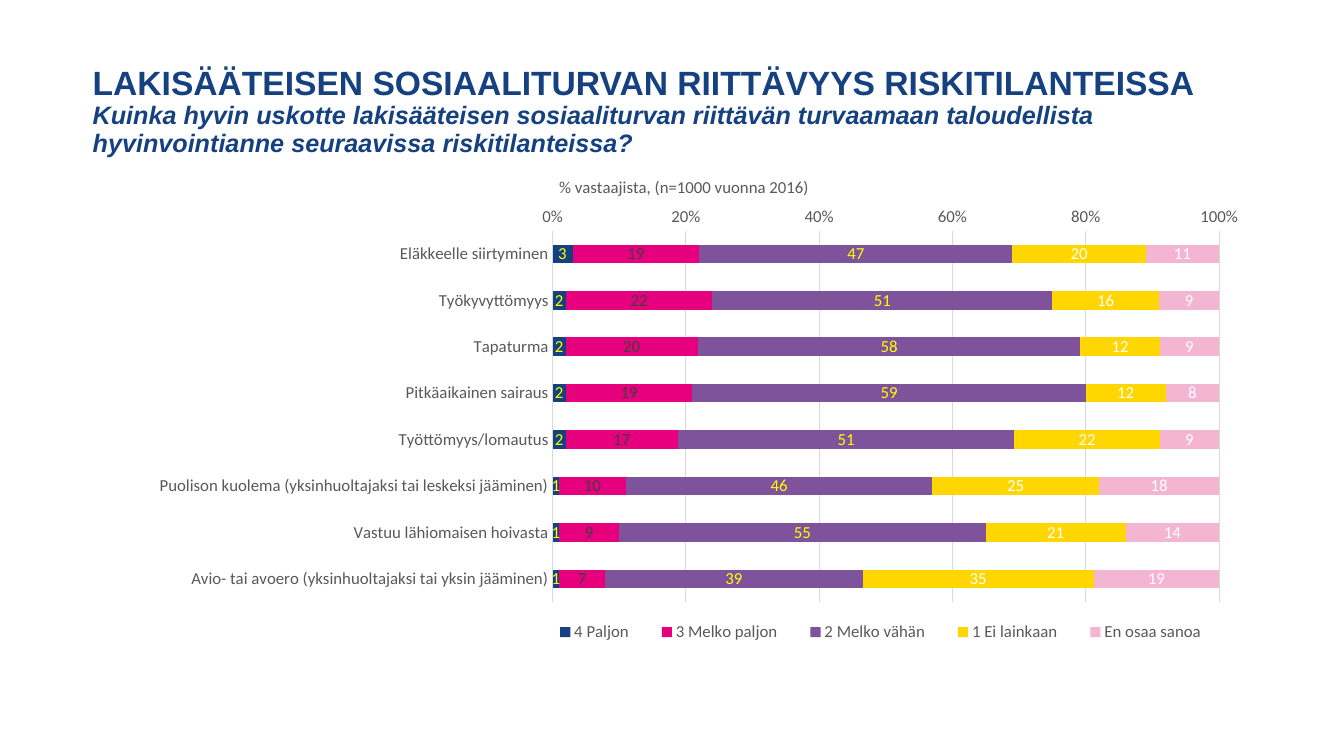
from lxml.etree import SubElement
from pptx import Presentation
from pptx.chart.data import CategoryChartData
from pptx.dml.color import RGBColor
from pptx.enum.chart import XL_CHART_TYPE as ChartType
from pptx.enum.chart import XL_LEGEND_POSITION as LegendPosition
from pptx.enum.chart import XL_TICK_MARK as TickMark
from pptx.enum.text import MSO_ANCHOR, MSO_AUTO_SIZE, PP_ALIGN
from pptx.oxml.ns import qn
from pptx.util import Pt

HEADING = "LAKISÄÄTEISEN SOSIAALITURVAN RIITTÄVYYS RISKITILANTEISSA"
QUESTION = ("Kuinka hyvin uskotte lakisääteisen sosiaaliturvan riittävän turvaamaan "
            "taloudellista hyvinvointianne seuraavissa riskitilanteissa?")
CHART_TITLE = "% vastaajista, (n=1000 vuonna 2016)"
RISKS = [
    "Eläkkeelle siirtyminen",
    "Työkyvyttömyys",
    "Tapaturma",
    "Pitkäaikainen sairaus",
    "Työttömyys/lomautus",
    "Puolison kuolema (yksinhuoltajaksi tai leskeksi jääminen)",
    "Vastuu lähiomaisen hoivasta",
    "Avio- tai avoero (yksinhuoltajaksi tai yksin jääminen)",
]
ANSWERS = [
    ("4 Paljon", (3, 2, 2, 2, 2, 1, 1, 1), "164180", "FFFF00"),
    ("3 Melko paljon", (19, 22, 20, 19, 17, 10, 9, 7), "E6007E", "404040"),
    ("2 Melko vähän", (47, 51, 58, 59, 51, 46, 55, 39), "7F539C", "FFFF00"),
    ("1 Ei lainkaan", (20, 16, 12, 12, 22, 25, 21, 35), "FFD600", "FFFFFF"),
    ("En osaa sanoa", (11, 9, 9, 8, 9, 18, 14, 19), "F4B5D3", "FFFFFF"),
]
NAVY, GREY, GRID = "164180", "595959", "D9D9D9"


def color(value):
    return RGBColor.from_string(value)


def format_font(font, size, value, name="Calibri", bold=False, italic=False):
    font.size = Pt(size)
    font.name = name
    font.bold = bold
    font.italic = italic
    font.color.rgb = color(value)


def format_line(line):
    line.color.rgb = color(GRID)
    line.width = Pt(0.75)


def set_layout(element, index, inner=False, **fractions):
    for old in element.findall(qn("c:layout")):
        element.remove(old)
    layout = SubElement(element, qn("c:layout"))
    manual = SubElement(layout, qn("c:manualLayout"))
    if inner:
        SubElement(manual, qn("c:layoutTarget")).set("val", "inner")
    for key in ("x", "y"):
        SubElement(manual, qn(f"c:{key}Mode")).set("val", "edge")
    for key, fraction in fractions.items():
        SubElement(manual, qn(f"c:{key}")).set("val", str(fraction))
    element.insert(index, layout)


def add_title(slide):
    title = slide.shapes.title
    title.left, title.top, title.width, title.height = Pt(59), Pt(28), Pt(828), Pt(104.4)
    frame = title.text_frame
    frame.word_wrap = True
    frame.auto_size = MSO_AUTO_SIZE.NONE
    frame.vertical_anchor = MSO_ANCHOR.MIDDLE
    paragraph = frame.paragraphs[0]
    paragraph.alignment = PP_ALIGN.LEFT
    paragraph.line_spacing = 0.9
    run = paragraph.add_run()
    run.text = HEADING
    format_font(run.font, 24, NAVY, "Arial", bold=True)
    paragraph.add_line_break()
    run = paragraph.add_run()
    run.text = QUESTION
    format_font(run.font, 18, NAVY, "Arial", bold=True, italic=True)


def add_answer_chart(slide):
    data = CategoryChartData(number_format="0")
    data.categories = RISKS
    for name, values, _, _ in ANSWERS:
        data.add_series(name, values)
    chart = slide.shapes.add_chart(
        ChartType.BAR_STACKED_100, Pt(66), Pt(116), Pt(828), Pt(351.4), data).chart
    format_font(chart.font, 10, "000000")

    chart.has_title = True
    run = chart.chart_title.text_frame.paragraphs[0].add_run()
    run.text = CHART_TITLE
    format_font(run.font, 12, GREY)
    chart.chart_title.include_in_layout = False

    chart.has_legend = True
    legend = chart.legend
    legend.position = LegendPosition.BOTTOM
    legend.include_in_layout = False
    format_font(legend.font, 12, GREY)

    for axis in (chart.category_axis, chart.value_axis):
        axis.major_tick_mark = TickMark.NONE
        axis.minor_tick_mark = TickMark.NONE
        format_font(axis.tick_labels.font, 12, GREY)
    chart.category_axis.reverse_order = True
    format_line(chart.category_axis.format.line)
    value_axis = chart.value_axis
    value_axis.minimum_scale, value_axis.maximum_scale = 0, 1
    value_axis.major_unit = 0.2
    value_axis.format.line.fill.background()
    value_axis.has_major_gridlines = True
    format_line(value_axis.major_gridlines.format.line)
    value_axis.tick_labels.number_format = "0%"
    value_axis.tick_labels.number_format_is_linked = False

    plot = chart.plots[0]
    plot.gap_width = 150
    plot.overlap = 100
    plot.vary_by_categories = False
    for series, (_, _, fill, label) in zip(plot.series, ANSWERS):
        series.format.fill.solid()
        series.format.fill.fore_color.rgb = color(fill)
        series.data_labels.show_value = True
        format_font(series.data_labels.font, 12, label)

    plot_area = chart.element.chart.plotArea
    set_layout(plot_area, 0, inner=True, x=0.397, y=0.139, w=0.575, h=0.755)
    set_layout(chart.element.chart.find(qn("c:title")), 1, x=0.4, y=0.02)
    set_layout(chart.element.chart.find(qn("c:legend")), 1, x=0.38, y=0.92, w=0.6, h=0.07)


def main():
    presentation = Presentation()
    presentation.slide_width, presentation.slide_height = Pt(960), Pt(540)
    slide = presentation.slides.add_slide(presentation.slide_layouts[5])
    add_title(slide)
    add_answer_chart(slide)
    presentation.save("out.pptx")


if __name__ == "__main__":
    main()
